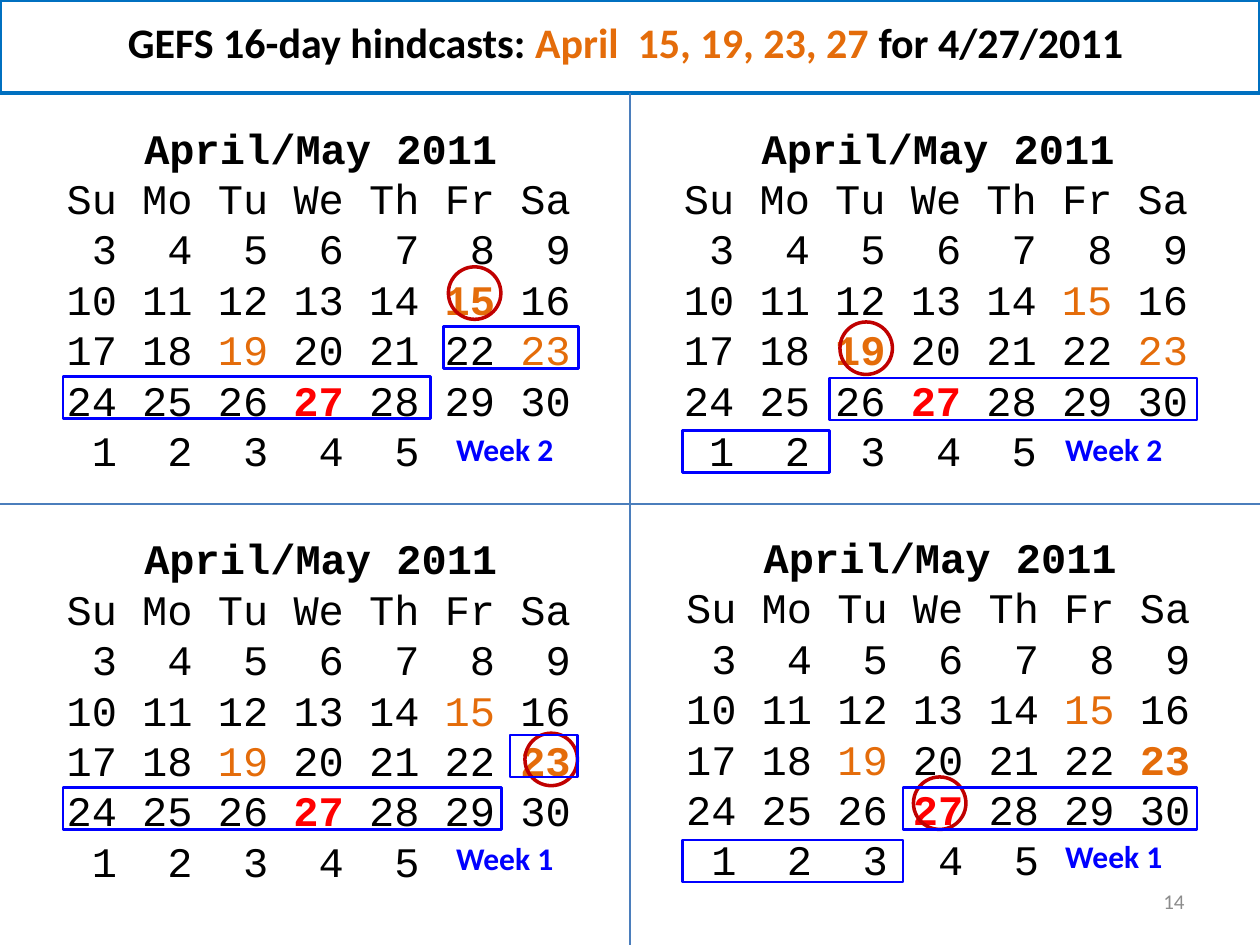
"""Build a slide of four hindcast calendars with start days and forecast weeks marked."""
import pptx
import pptx.dml.color
import pptx.enum.shapes
import pptx.enum.text
import pptx.util
from lxml import etree

Pt = pptx.util.Pt
SHAPE = pptx.enum.shapes.MSO_SHAPE
ALIGN = pptx.enum.text.PP_ALIGN
ANCHOR = pptx.enum.text.MSO_ANCHOR

COLOURS = {
    "text": "000000",
    "start": "E46C0A",
    "target": "FF0000",
    "week": "0000FF",
    "ring": "C00000",
    "banner": "0070C0",
    "divider": "4B7EBC",
    "number": "8C8C8C",
}
DATES = {"15": "start", "19": "start", "23": "start", "27": "target"}
MONTH = "April/May 2011"
WEEKS = [
    "Su Mo Tu We Th Fr Sa",
    " 3  4  5  6  7  8  9",
    "10 11 12 13 14 15 16",
    "17 18 19 20 21 22 23",
    "24 25 26 27 28 29 30",
    " 1  2  3  4  5",
]
CALENDARS = [
    {"at": (31, 66.25), "bold": {"15", "27"}, "ring": (256.25, 152.5),
     "frames": [(253.5, 186.75, 77), (36, 215, 210)],
     "week": ("Week 2", 253.5, 242)},
    {"at": (383.75, 66.25), "bold": {"19", "27"}, "ring": (480, 184),
     "frames": [(474, 216, 210), (390, 246, 84)],
     "week": ("Week 2", 601.5, 242)},
    {"at": (31, 301), "bold": {"23", "27"}, "ring": (300, 419),
     "frames": [(291.5, 420, 38.5), (36, 450, 250.5)],
     "week": ("Week 1", 253.5, 476)},
    {"at": (385, 300.25), "bold": {"23", "27"}, "ring": (522, 444),
     "frames": [(516, 450, 168), (390, 480, 126)],
     "week": ("Week 1", 601.5, 474.5)},
]


def rgb(name):
    """Return the named colour."""
    return pptx.dml.color.RGBColor.from_string(COLOURS[name])


def add_box(page, left, top, width, height, wrap=False, anchor=ANCHOR.TOP):
    """Add an empty text box and return its text frame."""
    frame = page.shapes.add_textbox(Pt(left), Pt(top), Pt(width), Pt(height)).text_frame
    frame.word_wrap = wrap
    frame.vertical_anchor = anchor
    return frame


def add_span(para, text, font="Calibri", size=24, colour="text", bold=False):
    """Add one formatted span of text to a paragraph."""
    span = para.add_run()
    span.text = text
    span.font.name = font
    span.font.size = Pt(size)
    span.font.bold = bold
    span.font.color.rgb = rgb(colour)


def add_outline(page, kind, left, top, width, height, colour, weight):
    """Add an unfilled shape with a coloured outline."""
    shape = page.shapes.add_shape(kind, Pt(left), Pt(top), Pt(width), Pt(height))
    shape.shadow.inherit = False
    shape.fill.background()
    shape.line.color.rgb = rgb(colour)
    shape.line.width = Pt(weight)
    return shape


def add_divider(page, start, end):
    """Add a straight divider line and return it."""
    line = page.shapes.add_connector(
        pptx.enum.shapes.MSO_CONNECTOR.STRAIGHT, *map(Pt, start + end))
    line.line.color.rgb = rgb("divider")
    line.line.width = Pt(1.5)
    effects = "{http://schemas.openxmlformats.org/drawingml/2006/main}effectLst"
    etree.SubElement(line._element.spPr, effects)
    return line


def add_week(para, week, bold):
    """Write one calendar row, setting the marked dates apart."""
    for date, colour in DATES.items():
        before, found, after = week.partition(date)
        if found:
            add_span(para, before, font="Courier New")
            add_span(para, date, font="Courier New", colour=colour, bold=date in bold)
            week = after
    if week:
        add_span(para, week, font="Courier New")


def add_calendar(page, at, bold):
    """Add the calendar text with the given dates in bold."""
    frame = add_box(page, *at, 304.5, 211)
    heading = frame.paragraphs[0]
    heading.alignment = ALIGN.CENTER
    add_span(heading, MONTH, font="Courier New", bold=True)
    for week in WEEKS:
        add_week(frame.add_paragraph(), week, bold)


def add_marks(page, ring, frames, week):
    """Ring the start day, frame the forecast days and label the week."""
    add_outline(page, SHAPE.OVAL, *ring, 30, 30, "ring", 2)
    for left, top, width in frames:
        add_outline(page, SHAPE.RECTANGLE, left, top, width, 24, "week", 1.5)
    label, left, top = week
    para = add_box(page, left, top, 70.5, 29).paragraphs[0]
    add_span(para, label, size=18, colour="week", bold=True)


def add_title(page):
    """Add the slide title."""
    para = add_box(page, 66, 6, 588, 36).paragraphs[0]
    add_span(para, "GEFS 16-day hindcasts: ", bold=True)
    add_span(para, "April  15, 19, 23, 27 ", colour="start", bold=True)
    add_span(para, "for 4/27/2011", bold=True)


def add_page_number(page):
    """Add the page number at the lower right."""
    para = add_box(page, 516, 500.5, 168, 28.75, wrap=True,
                   anchor=ANCHOR.MIDDLE).paragraphs[0]
    para.alignment = ALIGN.RIGHT
    add_span(para, "14", size=12, colour="number")


def main():
    """Build and save the slide."""
    deck = pptx.Presentation()
    deck.slide_width, deck.slide_height = Pt(720), Pt(540)
    page = deck.slides.add_slide(deck.slide_layouts[6])
    add_title(page)
    banner = add_outline(page, SHAPE.RECTANGLE, 0, 0, 720, 53.25, "banner", 2)
    add_divider(page, (0, 288), (720, 288))
    add_divider(page, (360, 53.25), (360, 540)).begin_connect(banner, 2)
    for calendar in CALENDARS:
        add_calendar(page, calendar["at"], calendar["bold"])
    for calendar in CALENDARS:
        add_marks(page, calendar["ring"], calendar["frames"], calendar["week"])
    add_page_number(page)
    deck.save("out.pptx")


if __name__ == "__main__":
    main()
